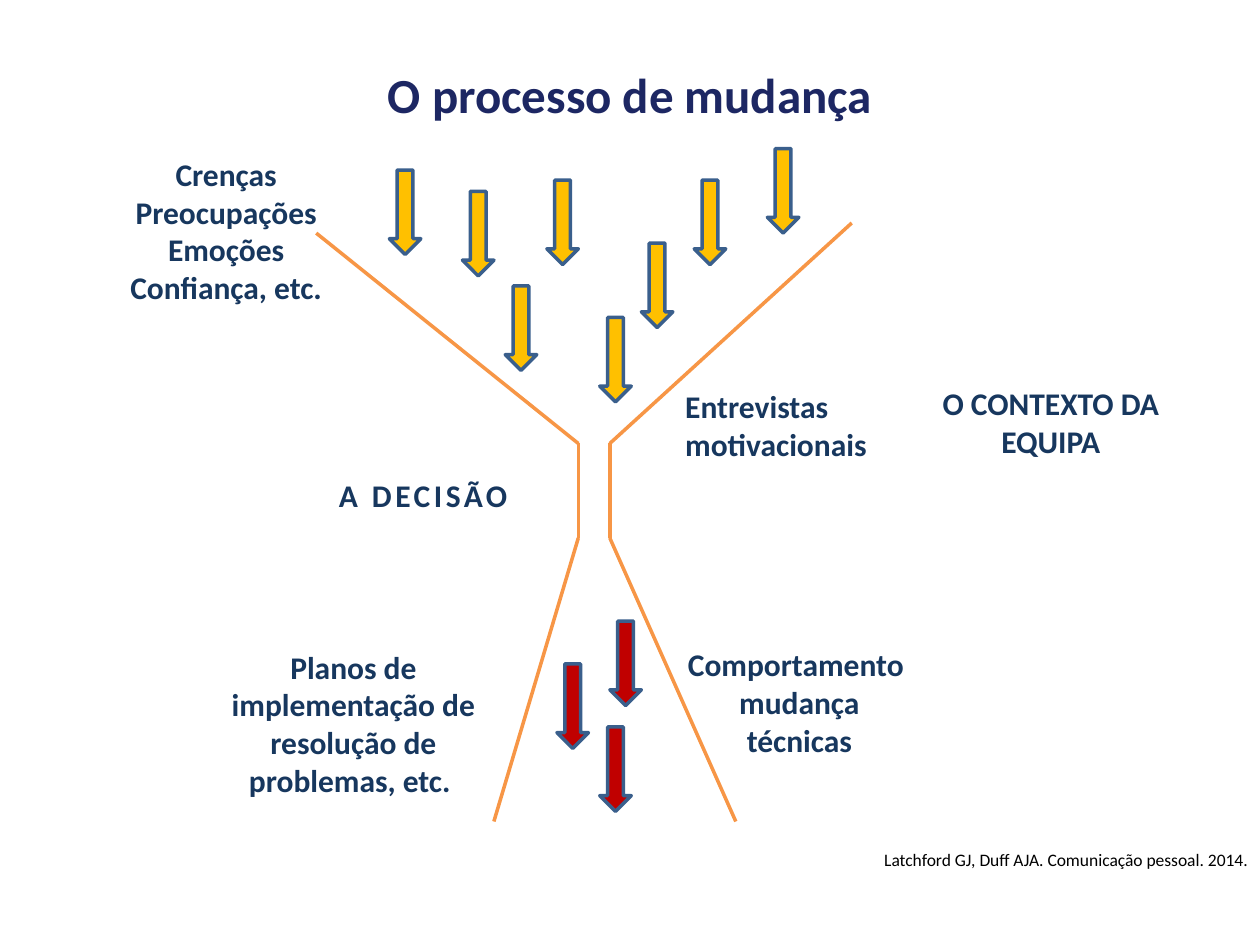
"""Build the slide on the process of change, drawn as a funnel."""
from itertools import pairwise

from lxml.etree import SubElement
from pptx import Presentation
from pptx.dml.color import RGBColor as Rgb
from pptx.enum.shapes import MSO_CONNECTOR as Link, MSO_SHAPE as Kind
from pptx.enum.text import MSO_ANCHOR as Anchor, PP_ALIGN as Align
from pptx.oxml.ns import qn
from pptx.util import Inches, Pt

FONT = "Calibri"
HUES = {"title": "1D2763", "label": "17375E", "cite": "000000", "wall": "F79646",
        "edge": "3A5F8C", "belief": "FFC000", "plan": "C00000"}
STYLES = {"title": (28, True), "label": (18, True), "cite": (10, False)}

TEXTS = [
    ("title", ["O processo de mudança"], (0.5, 0.32, 9, 0.85), Align.CENTER, 0),
    ("label", ["Entrevistas motivacionais"], (5.34, 3.02, 1.84, 0.71), Align.LEFT, 0),
    ("label", ["A DECISÃO"], (2.59, 3.73, 2.09, 0.4), Align.LEFT, 2),
    ("label", ["Comportamento ", "mudança", "técnicas"],
     (5.16, 5.07, 2.37, 1.01), Align.CENTER, 0),
    ("label", ["Planos de implementação de resolução de problemas, etc. "],
     (1.6, 5.09, 2.41, 1.31), Align.CENTER, 0),
    ("label", ["Crenças", "Preocupações", "Emoções", "Confiança, etc."],
     (-0.08, 1.18, 3.75, 1.3), Align.CENTER, 0),
    ("label", ["O CONTEXTO DA EQUIPA"], (7.32, 3, 2.04, 0.7), Align.CENTER, 0),
    ("cite", ["Latchford GJ, Duff AJA. Comunicação pessoal. 2014."],
     (-0.01, 6.69, 10.01, 0.27), Align.RIGHT, 0),
]
WALLS = [
    [(2.51, 1.85), (4.59, 3.52), (4.59, 4.27), (3.92, 6.52)],
    [(6.76, 1.77), (4.84, 3.52), (4.84, 4.27), (5.84, 6.52)],
]
ARROWS = {
    "belief": [(3.09, 1.35), (3.67, 1.52), (4.01, 2.27), (4.34, 1.43),
               (4.76, 2.52), (5.51, 1.43), (5.09, 1.93), (6.09, 1.18)],
    "plan": [(4.42, 5.27), (4.76, 5.77), (4.84, 4.93)],
}
ARROW_SIZE = (0.25, 0.67)


def inches(*nums):
    return [Inches(num) for num in nums]


def paint(line, hue):
    line.color.rgb = Rgb.from_string(HUES[hue])
    line.width = Pt(2)


def add_wall(slide, points):
    for start, end in pairwise(points):
        wall = slide.shapes.add_connector(Link.STRAIGHT, *inches(*start, *end))
        paint(wall.line, "wall")
        SubElement(wall._element.spPr, qn("a:effectLst"))


def add_arrow(slide, hue, spot):
    arrow = slide.shapes.add_shape(Kind.DOWN_ARROW, *inches(*spot, *ARROW_SIZE))
    arrow.shadow.inherit = False
    arrow.fill.solid()
    arrow.fill.fore_color.rgb = Rgb.from_string(HUES[hue])
    paint(arrow.line, "edge")


def add_text(slide, style, lines, area, align, gap):
    frame = slide.shapes.add_textbox(*inches(*area)).text_frame
    frame.word_wrap = True
    frame.vertical_anchor = Anchor.MIDDLE if style == "title" else Anchor.TOP
    frame.text = "\n".join(lines)
    size, bold = STYLES[style]
    for para in frame.paragraphs:
        para.alignment = align
        for run in para.runs:
            font = run.font
            font.name, font.size, font.bold = FONT, Pt(size), bold
            font.color.rgb = Rgb.from_string(HUES[style])
            if gap:
                run._r.get_or_add_rPr().set("spc", str(gap * 100))


def main():
    deck = Presentation()
    deck.slide_width, deck.slide_height = inches(10, 7.5)
    slide = deck.slides.add_slide(deck.slide_layouts[6])
    for points in WALLS:
        add_wall(slide, points)
    for hue, spots in ARROWS.items():
        for spot in spots:
            add_arrow(slide, hue, spot)
    for text in TEXTS:
        add_text(slide, *text)
    deck.save("out.pptx")


if __name__ == "__main__":
    main()
